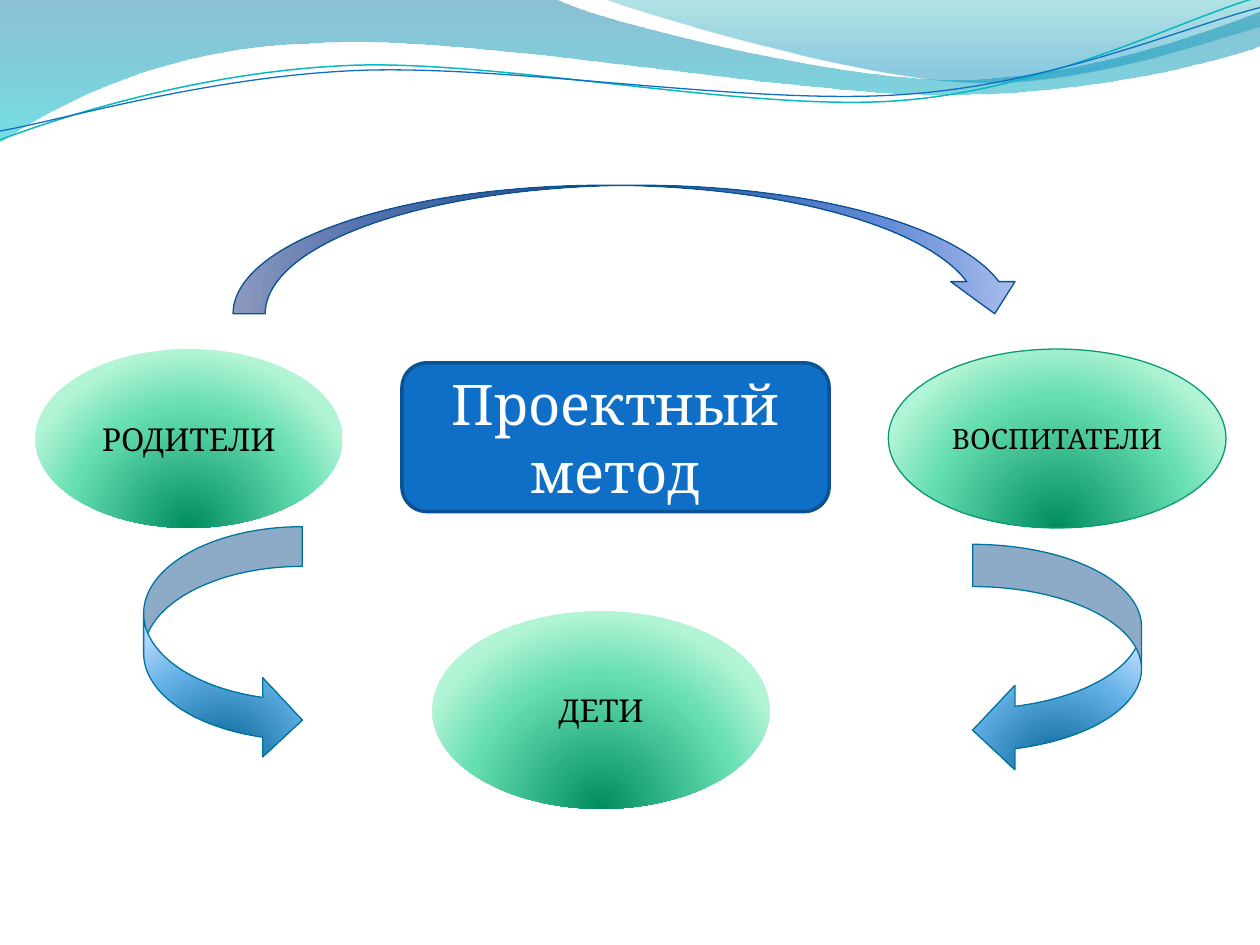
import pptx
import pptx.util
import pptx.dml.color
import pptx.enum.shapes
import pptx.enum.text
import pptx.oxml
import pptx.oxml.ns

Inches, Pt = pptx.util.Inches, pptx.util.Pt
RGB = pptx.dml.color.RGBColor.from_string
SHAPE = pptx.enum.shapes.MSO_SHAPE
qn = pptx.oxml.ns.qn

THEME = {
    "font": "Cambria", "title_size": 32, "label_size": 18, "long_label_size": 16,
    "white": "FFFFFF", "black": "000000", "blue": "0F6FC6", "blue_edge": "0B5292",
    "teal": "0AB8BF", "green_edge": "0A9B74", "arc_edge": "095295", "arrow_edge": "0074A1",
    # Gradient stops: position %, colour, opacity %
    "wave": [(0, "0074A1", 45), (100, "00C6CF", 55)],
    "wave_right": [(0, "00A1A9", 30), (80, "008BBF", 45)],
    "green": [(0, "008C60", 100), (68, "65DEB0", 100), (100, "B2F4D6", 100)],
    "arc": [(0, "003D87", 100), (68, "668DD7", 100), (100, "B3C4EF", 100)],
    "arrow": [(0, "006091", 100), (68, "64B1E7", 100), (100, "B1D6F9", 100)],
}
LINEAR = '<a:lin ang="5400000" scaled="0"/>'
RADIAL = '<a:path path="circle"><a:fillToRect l="50000" t="130000" r="50000" b="-30000"/></a:path>'


def paint(sp, fill, edge, width, direction=RADIAL):
    """Apply a gradient, solid or empty fill and an optional outline."""
    sp.shadow.inherit = False
    if fill is None:
        sp.fill.background()
    elif fill == "blue":
        sp.fill.solid()
        sp.fill.fore_color.rgb = RGB(THEME[fill])
    else:
        sp.fill.gradient()
        stops = "".join(
            f'<a:gs pos="{pos * 1000}"><a:srgbClr val="{color}">'
            f'<a:alpha val="{alpha * 1000}"/></a:srgbClr></a:gs>'
            for pos, color, alpha in THEME[fill])
        old = sp._element.spPr.find(qn("a:gradFill"))
        old.getparent().replace(old, pptx.oxml.parse_xml(
            f'<a:gradFill {pptx.oxml.ns.nsdecls("a")} rotWithShape="1">'
            f"<a:gsLst>{stops}</a:gsLst>{direction}</a:gradFill>"))
    if edge is None:
        sp.line.fill.background()
    else:
        sp.line.color.rgb = RGB(THEME[edge])
        sp.line.width = Pt(width)


def add_curve(shapes, segments, closed):
    """Build an outline: two numbers make a line, six make a Bézier curve."""
    (x, y), *rest = segments
    builder = shapes.build_freeform(Inches(x), Inches(y))
    points = [(Inches(px), Inches(py)) for seg in rest for px, py in zip(seg[::2], seg[1::2])]
    builder.add_line_segments(points, close=closed)
    sp = builder.convert_to_shape()
    lines = iter(list(sp._element.spPr.iter(qn("a:lnTo"))))
    for seg in rest:
        group = [next(lines) for _ in range(len(seg) // 2)]
        if len(group) == 3:
            curve = group[0].makeelement(qn("a:cubicBezTo"))
            group[0].addprevious(curve)
            for line in group:
                curve.append(line[0])
                line.getparent().remove(line)
    return sp


prs = pptx.Presentation()
prs.slide_width, prs.slide_height = Inches(10), Inches(7.5)
s = prs.slides.add_slide(prs.slide_layouts[6])

# Waves along the top: fill, edge, edge width, closed, segments
waves = [
    ("wave", None, 0, True, [
        (0, 0), (4.4, -0.01), (4.76, 0.17, 6.64, 0.63, 7.58, 0.63),
        (8.53, 0.63, 9.58, 0.26, 10, 0.09), (10.01, 0.36),
        (9.83, 0.44, 8.7, 0.76, 7.46, 0.75), (6.22, 0.75, 3.82, 0.28, 2.57, 0.34),
        (1.29, 0.36, 0.46, 0.83, -0.01, 1.13), (0, 0)]),
    ("wave_right", None, 0, True, [
        (4.79, -0.01), (5.09, 0.11, 6.82, 0.62, 7.69, 0.65),
        (8.56, 0.69, 9.61, 0.32, 10, 0.21), (10, 0), (4.79, -0.01)]),
    (None, "teal", 0.85, False, [
        (0, 1.11), (0.48, 0.93, 1.58, 0.57, 2.77, 0.52),
        (3.95, 0.47, 5.93, 0.89, 7.13, 0.8), (8.33, 0.71, 9.38, 0.15, 9.98, -0.02)]),
    (None, "blue", 0.75, False, [
        (0, 1.04), (0.47, 0.96, 1.64, 0.61, 2.83, 0.56),
        (4.03, 0.51, 5.97, 0.84, 7.17, 0.75), (8.36, 0.67, 9.41, 0.21, 10, 0.06)]),
]
for fill, edge, width, closed, segments in waves:
    paint(add_curve(s.shapes, segments, closed), fill, edge, width, LINEAR)

# Method, participants and arrows: kind, box, fill, edge, edge width, text, size, colour
items = [
    (SHAPE.ROUNDED_RECTANGLE, (3.19, 2.88, 3.39, 1.18), "blue", "blue_edge", 2,
     "Проектный метод", "title_size", "white"),
    (SHAPE.OVAL, (0.28, 2.77, 2.44, 1.42), "green", None, 0, "РОДИТЕЛИ", "label_size", "black"),
    (SHAPE.OVAL, (7.05, 2.77, 2.68, 1.42), "green", "green_edge", 0.75,
     "ВОСПИТАТЕЛИ", "long_label_size", "black"),
    (SHAPE.OVAL, (3.43, 4.85, 2.68, 1.57), "green", None, 0, "ДЕТИ", "label_size", "black"),
    (SHAPE.CURVED_DOWN_ARROW, (1.85, 1.47, 6.3, 1.02), "arc", "arc_edge", 0.75, None, None, None),
    (SHAPE.CURVED_RIGHT_ARROW, (1.14, 4.18, 1.26, 1.85), "arrow", "arrow_edge", 0.75,
     None, None, None),
    (SHAPE.CURVED_LEFT_ARROW, (7.72, 4.32, 1.34, 1.81), "arrow", "arrow_edge", 0.75,
     None, None, None),
]
for kind, box, fill, edge, width, text, size, color in items:
    sp = s.shapes.add_shape(kind, *map(Inches, box))
    paint(sp, fill, edge, width)
    if text:
        tf = sp.text_frame
        tf.word_wrap = True
        tf.vertical_anchor = pptx.enum.text.MSO_ANCHOR.MIDDLE
        p = tf.paragraphs[0]
        p.alignment = pptx.enum.text.PP_ALIGN.CENTER
        r = p.add_run()
        r.text = text
        for name, value in {"name": THEME["font"], "size": Pt(THEME[size])}.items():
            setattr(r.font, name, value)
        r.font.color.rgb = RGB(THEME[color])

prs.save("out.pptx")
